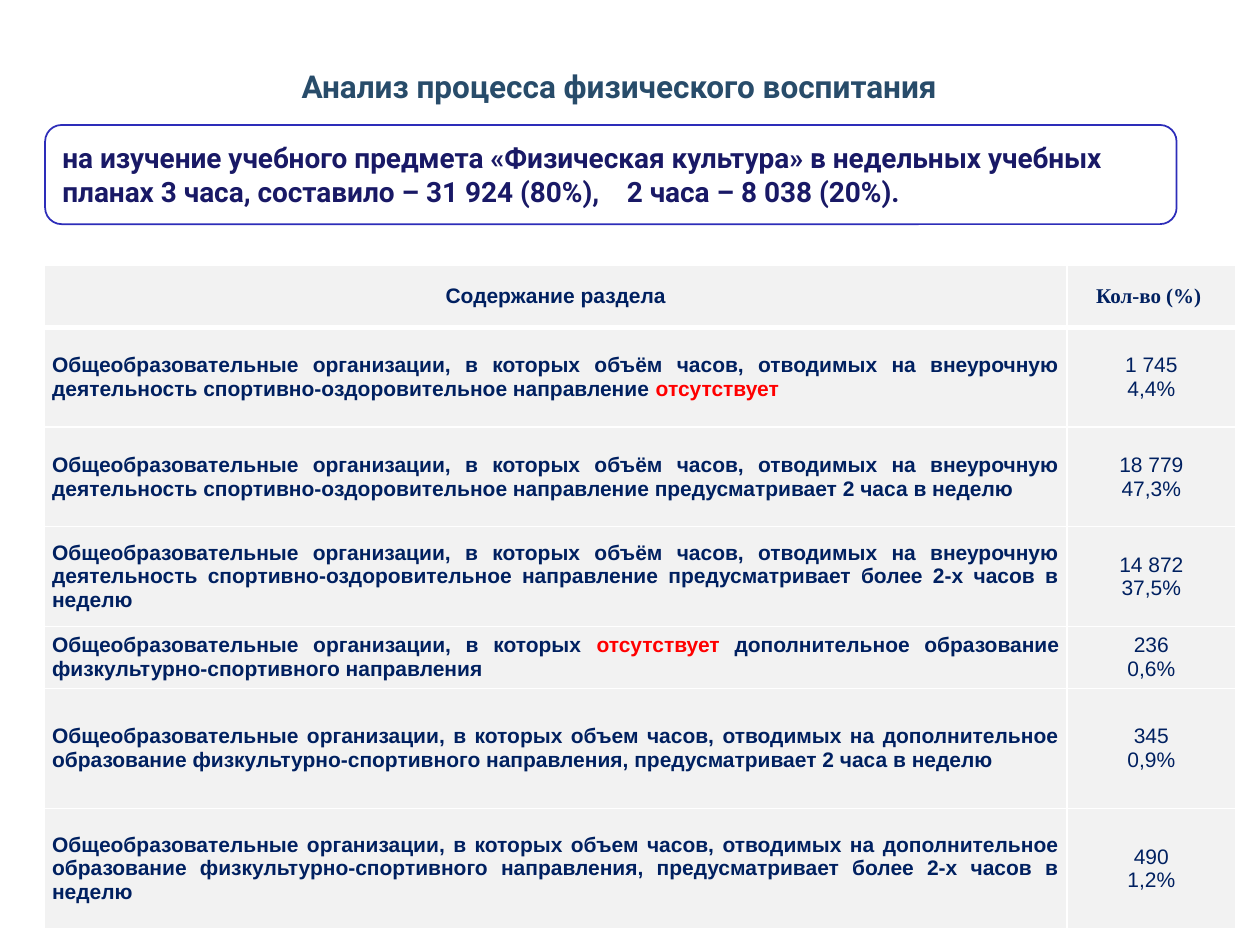
from lxml import etree
from pptx import Presentation
from pptx import util as u
from pptx.dml.color import RGBColor
from pptx.enum import shapes, text
from pptx.oxml import ns

COLORS = {
    "white": "FFFFFF", "title": "284C6A", "frame": "2D2DB9", "summary": "191966",
    "cell": "F2F2F2", "navy": "002060", "red": "FF0000",
}
ALIGN = text.PP_ALIGN
MIDDLE = text.MSO_ANCHOR.MIDDLE

SUMMARY = ("на изучение учебного предмета «Физическая культура» в недельных учебных "
           "планах 3 часа, составило – 31 924 (80%),\t2 часа – 8 038 (20%).")
ORGANISATIONS = "Общеобразовательные организации, в которых "
EXTRACURRICULAR = (ORGANISATIONS + "объём часов, отводимых на внеурочную деятельность "
                   "спортивно-оздоровительное направление ")
ADDITIONAL = (ORGANISATIONS + "объем часов, отводимых на дополнительное образование "
              "физкультурно-спортивного направления, ")
TWO_HOURS = "предусматривает 2 часа в неделю"
MORE_HOURS = "предусматривает более 2-х часов в неделю"
ABSENT = ("отсутствует", "red")

# Row height in cm, description spans, count, share
ROWS = [
    (2.01, [EXTRACURRICULAR, ABSENT], "1 745", "4,4%"),
    (2.01, [EXTRACURRICULAR + TWO_HOURS], "18 779", "47,3%"),
    (2.01, [EXTRACURRICULAR + MORE_HOURS], "14 872", "37,5%"),
    (1.25, [ORGANISATIONS, ABSENT,
            " дополнительное образование физкультурно-спортивного направления"],
     "236", "0,6%"),
    (2.42, [ADDITIONAL + TWO_HOURS], "345", "0,9%"),
    (2.42, [ADDITIONAL + MORE_HOURS], "490", "1,2%"),
]
HEADER_HEIGHT = 1.26
COLUMN_WIDTHS = (20.61, 3.4)


def rgb(name):
    return RGBColor.from_string(COLORS[name])


def write(frame, paragraphs, size=12, font="Arial", color="navy", bold=True,
          align=ALIGN.LEFT, tab=None):
    """Fill a text frame; a span is a string or a (string, colour name) pair."""
    frame.word_wrap = True
    for index, spans in enumerate(paragraphs):
        para = frame.add_paragraph() if index else frame.paragraphs[0]
        para.alignment = align
        if tab:
            stops = etree.SubElement(para._p.get_or_add_pPr(), ns.qn("a:tabLst"))
            etree.SubElement(stops, ns.qn("a:tab"), pos=str(u.Cm(tab)), algn="l")
        for item in spans:
            words, tint = (item, color) if isinstance(item, str) else item
            span = para.add_run()
            span.text = words
            span.font.size = u.Pt(size)
            span.font.name = font
            span.font.bold = bold
            span.font.color.rgb = rgb(tint)


class SlideBuilder:
    def __init__(self, deck):
        self.slide = deck.slides.add_slide(deck.slide_layouts[6])

    def title(self, words, left, top, width, height):
        box = self.slide.shapes.add_textbox(*map(u.Cm, (left, top, width, height)))
        box.text_frame.vertical_anchor = MIDDLE
        write(box.text_frame, [[words]], size=18, font="Roboto", color="title",
              align=ALIGN.CENTER)

    def panel(self, words, left, top, width, height):
        box = self.slide.shapes.add_shape(
            shapes.MSO_SHAPE.ROUNDED_RECTANGLE, *map(u.Cm, (left, top, width, height)))
        box.shadow.inherit = False
        box.fill.solid()
        box.fill.fore_color.rgb = rgb("white")
        box.line.color.rgb = rgb("frame")
        box.line.width = u.Pt(1)
        box.text_frame.vertical_anchor = MIDDLE
        write(box.text_frame, [[words]], size=16, font="Roboto", color="summary", tab=11.38)

    def cell(self, cell, paragraphs, top=1, bottom=1, **style):
        """Style one table cell; top and bottom are border widths in points."""
        cell.fill.solid()
        cell.fill.fore_color.rgb = rgb("cell")
        cell.vertical_anchor = MIDDLE
        cell.margin_left = cell.margin_right = u.Cm(0.15)
        cell.margin_top = cell.margin_bottom = 0
        properties = cell._tc.get_or_add_tcPr()
        borders = {"lnL": 1, "lnR": 1, "lnT": top, "lnB": bottom}
        for index, (side, width) in enumerate(borders.items()):
            line = etree.Element(ns.qn("a:" + side), w=str(u.Pt(width)))
            fill = etree.SubElement(line, ns.qn("a:solidFill"))
            etree.SubElement(fill, ns.qn("a:srgbClr"), val=COLORS["white"])
            properties.insert(index, line)
        write(cell.text_frame, paragraphs, **style)

    def table(self, left, top):
        heights = [HEADER_HEIGHT] + [row[0] for row in ROWS]
        table = self.slide.shapes.add_table(
            len(heights), len(COLUMN_WIDTHS), u.Cm(left), u.Cm(top),
            u.Cm(sum(COLUMN_WIDTHS)), u.Cm(sum(heights))).table
        table.first_row = table.horz_banding = False
        for column, width in zip(table.columns, COLUMN_WIDTHS):
            column.width = u.Cm(width)
        for row, height in zip(table.rows, heights):
            row.height = u.Cm(height)
        headings = [("Содержание раздела", "Arial"), ("Кол-во (%) ", "Times New Roman")]
        for index, (words, font) in enumerate(headings):
            self.cell(table.cell(0, index), [[words]], bottom=3, font=font,
                      align=ALIGN.CENTER)
        for index, (_, description, count, share) in enumerate(ROWS, start=1):
            top_border = 3 if index == 1 else 1
            self.cell(table.cell(index, 0), [description], top=top_border,
                      align=ALIGN.JUSTIFY)
            self.cell(table.cell(index, 1), [[count], [share]], top=top_border,
                      bold=False, align=ALIGN.CENTER)


def main():
    deck = Presentation()
    deck.slide_width, deck.slide_height = u.Cm(25.4), u.Cm(19.05)
    page = SlideBuilder(deck)
    page.title("Анализ процесса физического воспитания", 1.27, 0.74, 22.43, 2)
    page.panel(SUMMARY, 0.91, 2.52, 22.81, 2)
    page.table(0.9, 5.34)
    deck.save("out.pptx")


if __name__ == "__main__":
    main()
